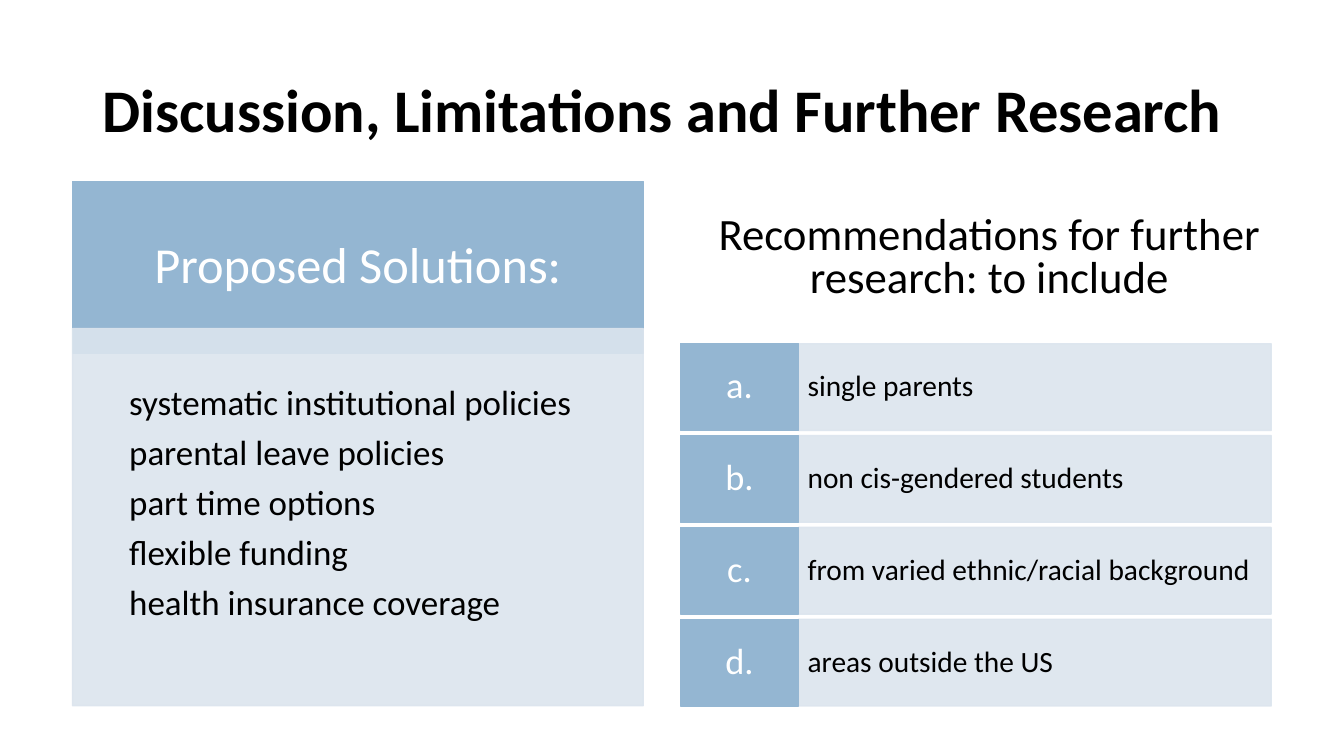
import pptx
import pptx.dml.color
import pptx.enum.shapes
import pptx.enum.text
import pptx.oxml.ns
import pptx.util
from lxml import etree

Pt = pptx.util.Pt
ALIGN = pptx.enum.text.PP_ALIGN
ANCHOR = pptx.enum.text.MSO_ANCHOR

COLORS = {"blue": "94B6D2", "pale": "DCE5EE", "black": "000000", "white": "FFFFFF"}
FONT = "Calibri"

SOLUTIONS = [
    "systematic institutional policies",
    "parental leave policies",
    "part time options",
    "flexible funding",
    "health insurance coverage",
]
GROUPS_TO_INCLUDE = [
    ("a.", "single parents"),
    ("b.", "non cis-gendered students"),
    ("c.", "from varied ethnic/racial background"),
    ("d.", "areas outside the US"),
]


def color(name):
    return pptx.dml.color.RGBColor.from_string(COLORS[name])


def set_text(shape, lines, size, color_name="black", align=ALIGN.LEFT, anchor=ANCHOR.MIDDLE,
             margins=(7.2, 3.6), line_spacing=0.9, space_after=0, bold=False):
    """Write one paragraph per line; margins are (left and right, top and bottom)."""
    frame = shape.text_frame
    frame.word_wrap = True
    frame.auto_size = pptx.enum.text.MSO_AUTO_SIZE.NONE
    frame.vertical_anchor = anchor
    frame.margin_left = frame.margin_right = Pt(margins[0])
    frame.margin_top = frame.margin_bottom = Pt(margins[1])
    frame.text = "\n".join(lines)
    for paragraph in frame.paragraphs:
        paragraph.alignment = align
        paragraph.line_spacing = line_spacing
        paragraph.space_before = Pt(0)
        paragraph.space_after = Pt(space_after)
        paragraph.font.name = FONT
        paragraph.font.size = Pt(size)
        paragraph.font.bold = bold
        paragraph.font.color.rgb = color(color_name)


def add_panel(slide, left, top, width, height, color_name, opacity=100):
    """Add a rectangle whose fill and outline share one colour and opacity."""
    panel = slide.shapes.add_shape(pptx.enum.shapes.MSO_SHAPE.RECTANGLE,
                                   Pt(left), Pt(top), Pt(width), Pt(height))
    panel.shadow.inherit = False
    panel.fill.solid()
    panel.fill.fore_color.rgb = color(color_name)
    panel.line.color.rgb = color(color_name)
    panel.line.width = Pt(1)
    if opacity < 100:
        qn = pptx.oxml.ns.qn
        for element in panel._element.spPr.iter(qn("a:srgbClr")):
            etree.SubElement(element, qn("a:alpha")).set("val", str(opacity * 1000))
    return panel


def add_title(slide, text):
    title = slide.shapes.title
    title.left, title.top, title.width, title.height = Pt(66), Pt(28.75), Pt(828), Pt(104.4)
    set_text(title, [text], 43.2, bold=True)


def add_solutions(slide):
    left, width = 51.75, 407.75
    header = add_panel(slide, left, 129.75, width, 122.5, "blue")
    set_text(header, ["Proposed Solutions:"], 36, "white", ALIGN.CENTER, margins=(32.4, 32.4))
    body = add_panel(slide, left, 234.75, width, 269.25, "pale", opacity=90)
    set_text(body, SOLUTIONS, 25, anchor=ANCHOR.TOP, margins=(40.5, 40.5), space_after=8.75)


def add_recommendations(slide):
    heading = slide.shapes.add_textbox(Pt(480), Pt(145.5), Pt(453.6), Pt(74))
    set_text(heading, ["Recommendations for further research: to include"], 32,
             align=ALIGN.CENTER, anchor=ANCHOR.BOTTOM, line_spacing=0.8)

    # Lettered rows
    left, top, pitch, height = 486, 245.5, 65.6, 62
    letter_width, label_width = 84.4, 337.6
    for index, (letter, label) in enumerate(GROUPS_TO_INCLUDE):
        row_top = top + index * pitch
        label_panel = add_panel(slide, left + letter_width, row_top, label_width, height,
                                "pale", opacity=90)
        set_text(label_panel, [label], 21, margins=(6.5, 15.8))
        letter_panel = add_panel(slide, left, row_top, letter_width, height, "blue")
        set_text(letter_panel, [letter], 26, "white", ALIGN.CENTER, margins=(4.3, 5.8))


def main():
    presentation = pptx.Presentation()
    presentation.slide_width, presentation.slide_height = Pt(960), Pt(540)
    slide = presentation.slides.add_slide(presentation.slide_layouts.get_by_name("Title Only"))
    add_title(slide, "Discussion, Limitations and Further Research")
    add_recommendations(slide)
    add_solutions(slide)
    presentation.save("out.pptx")


if __name__ == "__main__":
    main()
